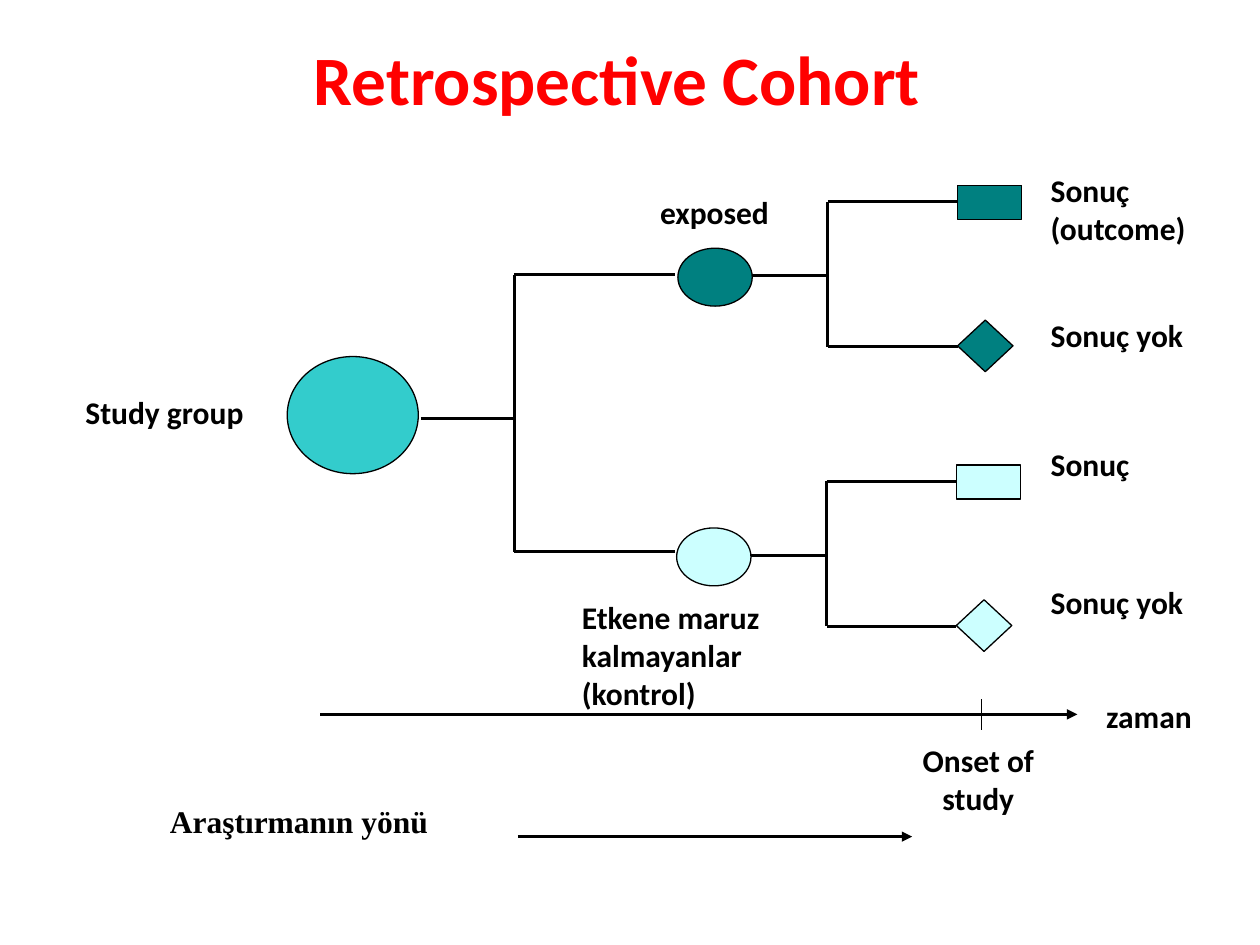
from lxml.etree import SubElement
from pptx import Presentation
from pptx.dml.color import RGBColor
from pptx.enum.shapes import MSO_CONNECTOR, MSO_SHAPE
from pptx.enum.text import MSO_ANCHOR, MSO_AUTO_SIZE, PP_ALIGN
from pptx.oxml.ns import qn
from pptx.util import Inches, Pt

RED = RGBColor(0xFF, 0x00, 0x00)
BLACK = RGBColor(0x00, 0x00, 0x00)
TEAL = RGBColor(0x00, 0x80, 0x80)
TURQUOISE = RGBColor(0x33, 0xCC, 0xCC)
PALE_CYAN = RGBColor(0xCC, 0xFF, 0xFF)

# Text, left, top, width, height
LABELS = [
    ("Sonuç\n(outcome)", 8.24, 1.31, 1.52, 0.78),
    ("Sonuç yok", 8.24, 2.46, 1.52, 0.69),
    ("Sonuç", 8.24, 3.48, 1.39, 0.78),
    ("Sonuç yok", 8.24, 4.58, 1.52, 0.69),
    ("Study group", 0.58, 3.07, 1.69, 0.68),
    ("exposed", 5.14, 1.48, 1.44, 0.78),
    ("Etkene maruz kalmayanlar (kontrol)", 4.52, 4.7, 2.3, 0.78),
    ("zaman", 8.68, 5.48, 1.04, 0.35),
]


def set_title(slide, text):
    title = slide.shapes.title
    title.left, title.top = Inches(1.3), Inches(0.23)
    title.width, title.height = Inches(7.32), Inches(0.77)
    frame = title.text_frame
    frame.text = text
    frame.auto_size = MSO_AUTO_SIZE.NONE
    frame.vertical_anchor = MSO_ANCHOR.MIDDLE
    para = frame.paragraphs[0]
    para.alignment = PP_ALIGN.CENTER
    style_font(para.font, 39.6, RED)


def style_font(font, size, color, name="Calibri"):
    font.name = name
    font.size = Pt(size)
    font.bold = True
    font.color.rgb = color


def add_label(slide, text, left, top, width, height,
              align=PP_ALIGN.LEFT, font_name="Calibri"):
    box = slide.shapes.add_textbox(
        Inches(left), Inches(top), Inches(width), Inches(height))
    frame = box.text_frame
    frame.word_wrap = True
    frame.text = text
    for para in frame.paragraphs:
        para.alignment = align
        style_font(para.font, 18, BLACK, font_name)
    return box


def add_node(slide, kind, left, top, width, height, color):
    node = slide.shapes.add_shape(
        kind, Inches(left), Inches(top), Inches(width), Inches(height))
    node.shadow.inherit = False
    node.fill.solid()
    node.fill.fore_color.rgb = color
    node.line.color.rgb = BLACK
    node.line.width = Pt(0.75)


def add_line(slide, x1, y1, x2, y2, weight=1.75, arrow=False):
    line = slide.shapes.add_connector(
        MSO_CONNECTOR.STRAIGHT, Inches(x1), Inches(y1), Inches(x2), Inches(y2))
    line.line.color.rgb = BLACK
    line.line.width = Pt(weight)
    properties = line._element.spPr
    if arrow:
        SubElement(properties.find(qn("a:ln")), qn("a:tailEnd"), type="triangle")
    SubElement(properties, qn("a:effectLst"))


def add_fork(slide, start, middle, end, stem_y, top, bottom):
    """Draw a stem that splits into an upper and a lower branch."""
    add_line(slide, start, stem_y, middle, stem_y)
    add_line(slide, middle, top, middle, bottom)
    for y in (top, bottom):
        add_line(slide, middle, y, end, y)


def add_cohort(slide, left, top, color):
    """Draw a group with its two outcomes, from the group's left and the first outcome's top."""
    add_fork(slide, left + 0.59, left + 1.19, left + 2.22,
             top + 0.72, top + 0.13, top + 1.28)
    add_node(slide, MSO_SHAPE.OVAL, left, top + 0.5, 0.59, 0.46, color)
    add_node(slide, MSO_SHAPE.RECTANGLE, left + 2.22, top, 0.51, 0.27, color)
    add_node(slide, MSO_SHAPE.DIAMOND, left + 2.22, top + 1.07, 0.44, 0.41, color)


def add_timeline(slide):
    add_line(slide, 2.54, 5.67, 8.55, 5.67, arrow=True)
    add_line(slide, 7.79, 5.55, 7.79, 5.79, weight=0.75)
    add_label(slide, "Onset of study", 6.98, 5.83, 1.57, 0.7, PP_ALIGN.CENTER)


def add_direction(slide):
    add_line(slide, 4.11, 6.64, 7.24, 6.64, arrow=True)
    label = add_label(slide, "Araştırmanın yönü", 1.25, 6.32, 2.45, 0.4,
                      font_name="Times New Roman")
    label.text_frame.word_wrap = False
    label.text_frame.auto_size = MSO_AUTO_SIZE.SHAPE_TO_FIT_TEXT


def main():
    deck = Presentation()
    deck.slide_width, deck.slide_height = Inches(10), Inches(7.5)
    slide = deck.slides.add_slide(deck.slide_layouts[5])

    set_title(slide, "Retrospective Cohort ")
    add_cohort(slide, 5.38, 1.47, TEAL)
    add_cohort(slide, 5.37, 3.69, PALE_CYAN)
    add_fork(slide, 3.34, 4.08, 5.36, 3.32, 2.18, 4.38)
    add_node(slide, MSO_SHAPE.OVAL, 2.28, 2.83, 1.04, 0.93, TURQUOISE)
    for label in LABELS:
        add_label(slide, *label)
    add_timeline(slide)
    add_direction(slide)

    deck.save("out.pptx")


if __name__ == "__main__":
    main()
